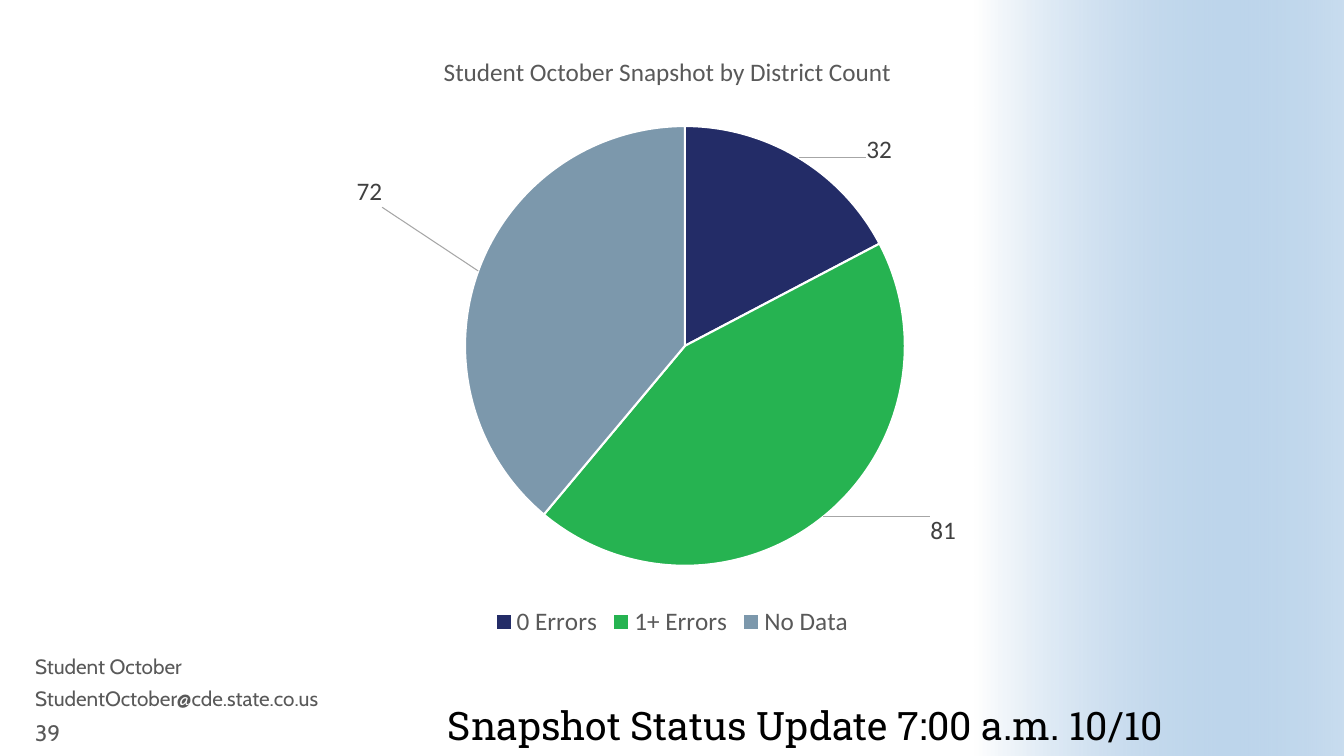
from lxml.etree import SubElement
from pptx import Presentation
from pptx.chart.data import CategoryChartData
from pptx.dml.color import RGBColor
from pptx.enum.chart import XL_CHART_TYPE, XL_LABEL_POSITION, XL_LEGEND_POSITION
from pptx.enum.shapes import MSO_SHAPE
from pptx.enum.text import MSO_ANCHOR, PP_ALIGN
from pptx.oxml import parse_xml
from pptx.oxml.ns import nsdecls, qn
from pptx.util import Inches, Pt

COLORS = {
    "white": "FFFFFF", "black": "000000", "band": "488BC9",
    "gray": "595959", "label": "404040", "leader": "A6A6A6",
}
# category, district count, slice colour, label shift as a fraction of the chart
SLICES = [
    ("0 Errors", 32, "232C67", (0.05, 0.02)),
    ("1+ Errors", 81, "26B351", (0.08, -0.01)),
    ("No Data", 72, "7C98AC", (-0.07, -0.1)),
]


def rgb(name):
    return RGBColor.from_string(COLORS.get(name, name))


def style_font(font, size, color, name="Calibri"):
    font.size, font.name, font.bold = Pt(size), name, False
    font.color.rgb = rgb(color)


def write(tf, text, size=14.8, color="gray", name="Cabin", align=PP_ALIGN.LEFT,
          anchor=MSO_ANCHOR.MIDDLE, spacing=1.0, inset=None):
    tf.word_wrap = True
    tf.vertical_anchor = anchor
    if inset is not None:
        tf.margin_left = tf.margin_right = Inches(inset)
        tf.margin_top = tf.margin_bottom = Inches(inset)
    p = tf.paragraphs[0]
    p.alignment, p.line_spacing = align, spacing
    r = p.add_run()
    r.text = text
    style_font(r.font, size, color, name)


def layout_xml(**values):
    """Manual chart layout; each value is a fraction of the chart."""
    target = '<c:layoutTarget val="inner"/>' if "w" in values else ""
    modes = '<c:xMode val="edge"/><c:yMode val="edge"/>' if values.pop("edge", False) else ""
    parts = "".join(f'<c:{k} val="{v}"/>' for k, v in values.items())
    return parse_xml(f'<c:layout {nsdecls("c")}><c:manualLayout>{target}{modes}{parts}'
                     "</c:manualLayout></c:layout>")


def set_layout(parent, before, **values):
    for old in parent.findall(qn("c:layout")):
        parent.remove(old)
    parent.find(qn(before)).addprevious(layout_xml(**values))


def add_side_band(s, x, y, w, h):
    sp = s.shapes.add_shape(MSO_SHAPE.RECTANGLE, Inches(x), Inches(y), Inches(w), Inches(h))
    sp.shadow.inherit = False
    sp.line.fill.background()
    sp.fill.gradient()
    sp.fill.gradient_angle = 0
    for stop, color in zip(sp.fill.gradient_stops, ("white", "band")):
        stop.color.rgb = rgb(color)
    clr = sp._element.findall(".//" + qn("a:srgbClr"))[-1]
    SubElement(clr, qn("a:alpha")).set("val", "30000")
    s.shapes.title._element.addprevious(sp._element)


def add_title(s, x, y, w, h):
    title = s.shapes.title
    title.left, title.top, title.width, title.height = map(Inches, (x, y, w, h))
    write(title.text_frame, "Snapshot Status Update 7:00 a.m. 10/10", size=28, color="black",
          name="Roboto Slab", align=PP_ALIGN.RIGHT, anchor=MSO_ANCHOR.BOTTOM,
          spacing=0.9, inset=0)


def add_district_pie(s, x, y, w, h):
    data = CategoryChartData()
    data.categories = [name for name, *_ in SLICES]
    data.add_series("Series 1", [count for _, count, *_ in SLICES])
    chart = s.shapes.add_chart(XL_CHART_TYPE.PIE, Inches(x), Inches(y), Inches(w), Inches(h),
                               data).chart
    style_font(chart.font, 10, "black")

    chart.has_title = True
    p = chart.chart_title.text_frame.paragraphs[0]
    r = p.add_run()
    r.text = "Student October Snapshot by District Count"
    style_font(r.font, 18, "gray")
    set_layout(chart._chartSpace.chart.find(qn("c:title")), "c:overlay", edge=True, x=0.32, y=0.04)

    chart.has_legend = True
    chart.legend.position = XL_LEGEND_POSITION.BOTTOM
    chart.legend.include_in_layout = False
    style_font(chart.legend.font, 18, "gray")

    plot = chart.plots[0]
    plot.vary_by_categories = True
    set_layout(chart._chartSpace.chart.plotArea, "c:pieChart",
               edge=True, x=0.34, y=0.16, w=0.34, h=0.72)
    series = plot.series[0]
    labels = series.data_labels
    labels.show_value = True
    labels.position = XL_LABEL_POSITION.OUTSIDE_END
    style_font(labels.font, 18, "label")
    for i, (_, _, color, (dx, dy)) in enumerate(SLICES):
        point = series.points[i]
        point.format.fill.solid()
        point.format.fill.fore_color.rgb = rgb(color)
        point.format.line.color.rgb = rgb("white")
        point.format.line.width = Pt(1.5)
        label = point.data_label
        style_font(label.font, 18, "label")
        label.position = XL_LABEL_POSITION.OUTSIDE_END
        dlbl = labels._element.findall(qn("c:dLbl"))[i]
        dlbl.find(qn("c:idx")).addnext(layout_xml(x=dx, y=dy))
    add_leader_lines(labels._element)


def add_leader_lines(dlbls):
    for old in dlbls.findall(qn("c:showLeaderLines")):
        dlbls.remove(old)
    SubElement(dlbls, qn("c:showLeaderLines")).set("val", "1")
    dlbls.append(parse_xml(
        f'<c:leaderLines {nsdecls("c", "a")}><c:spPr><a:ln w="9525"><a:solidFill>'
        f'<a:srgbClr val="{COLORS["leader"]}"/></a:solidFill></a:ln></c:spPr></c:leaderLines>'))


def add_footer(s, x, y, w, row_h):
    rows = [("Student October", 14.8, 0.8), ("StudentOctober@cde.state.co.us", 14.8, 0.8),
            ("39", 16, 1.0)]
    for i, (text, size, spacing) in enumerate(rows):
        box = s.shapes.add_textbox(Inches(x), Inches(y + i * row_h), Inches(w), Inches(row_h))
        write(box.text_frame, text, size=size, spacing=spacing)


def main():
    prs = Presentation()
    prs.slide_width, prs.slide_height = Inches(13.33), Inches(7.5)
    s = prs.slides.add_slide(prs.slide_layouts[5])
    add_side_band(s, 9.67, 0, 3.66, 7.5)
    add_title(s, 4.29, 6.45, 7.24, 0.98)
    add_district_pie(s, 0.25, 0.25, 12.83, 6.12)
    add_footer(s, 0.25, 6.47, 3.89, 0.32)
    prs.save("out.pptx")


if __name__ == "__main__":
    main()
